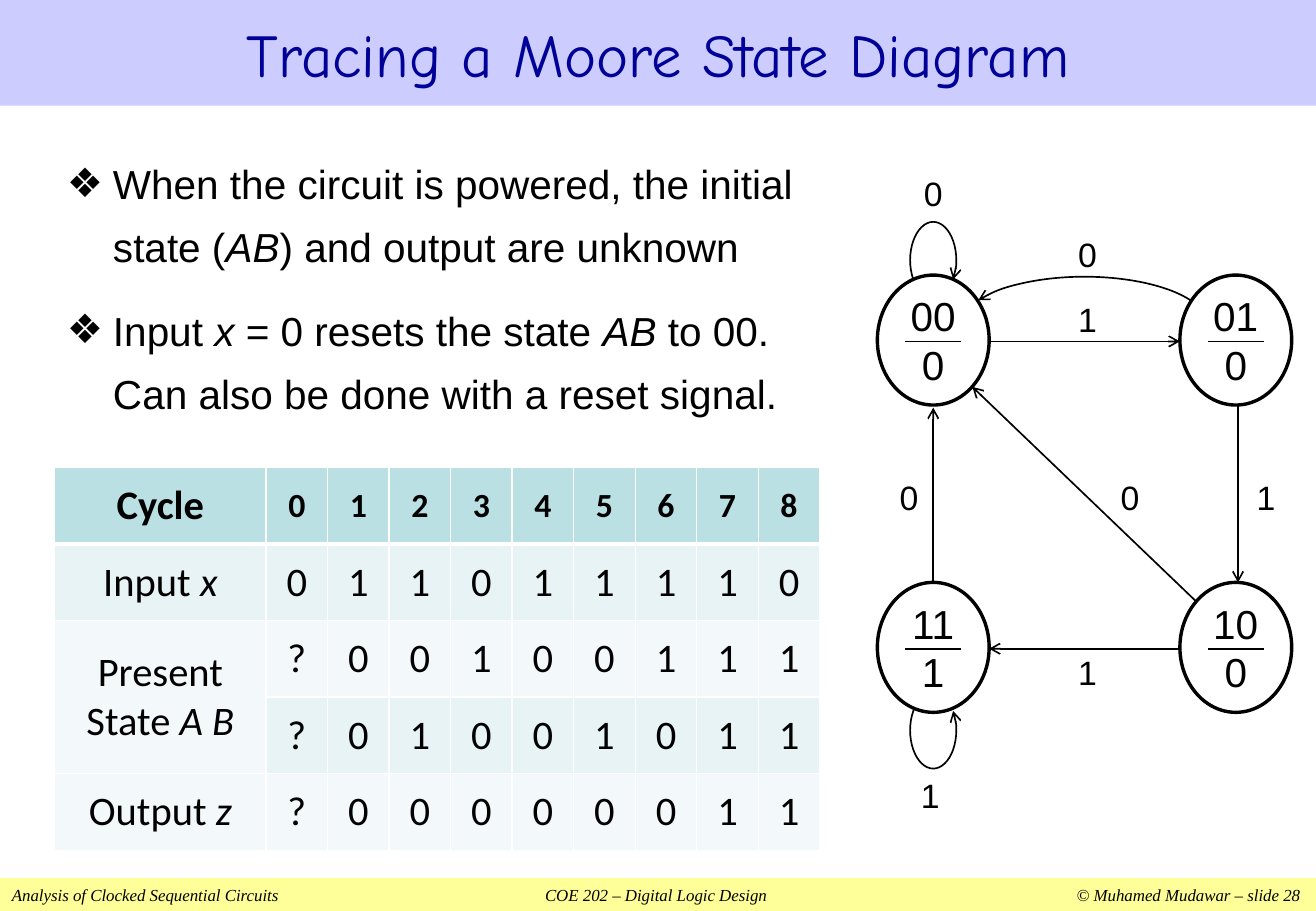
from dataclasses import dataclass

from lxml import etree
from pptx import Presentation
from pptx import util as u
from pptx.dml.color import RGBColor
from pptx.enum import shapes, text
from pptx.oxml import ns

TITLE = "Tracing a Moore State Diagram"
POINTS = [
    "When the circuit is powered, the initial state (*AB*) and output are unknown",
    "Input *x* = 0 resets the state *AB* to 00. Can also be done with a reset signal.",
]
FOOTER = ("Analysis of Clocked Sequential Circuits", "COE 202 – Digital Logic Design",
          "© Muhamed Mudawar – slide 28")
TRACE = [
    (["Cycle"], "012345678"),
    (["Input *x*"], "011011110"),
    (["Present", "State *A B*"], "?00100111"),
    ([], "?01001011"),
    (["Output *z*"], "?00000011"),
]
STATES = {"00": (0, 0, "0"), "01": (1, 0, "0"), "10": (1, 1, "0"), "11": (0, 1, "1")}
EDGES = [
    ("00", (1, 0.51), "01", (0, 0.51)),
    ("01", (0.52, 1), "10", (0.52, 0)),
    ("10", (0, 0.51), "11", (1, 0.51)),
    ("11", (0.5, 0), "00", (0.5, 1.02)),
    ("10", (0.15, 0.15), "00", (0.85, 0.86)),
]
ARCS = [
    ((0.5, -0.05), (2.03, 0.79), (115.8, 209.3), "headEnd", False),
    ((0, -0.26), (0.38, 0.63), (80.3, 26.56), "tailEnd", False),
    ((0, 1.27), (0.38, 0.63), (80.3, 26.56), "tailEnd", True),
]
LABELS = [
    ("0", 0, -0.48), ("0", 0.51, -0.28), ("1", 0.51, -0.07), ("0", -0.08, 0.51),
    ("0", 0.65, 0.51), ("1", 1.1, 0.51), ("1", 0.51, 1.08), ("1", -0.01, 1.48),
]


@dataclass(frozen=True)
class Theme:
    ink: str = "000000"
    paper: str = "FFFFFF"
    title_ink: str = "000099"
    title_band: str = "CCCCFF"
    footer_band: str = "FFFF99"
    header_row: str = "BBE0E3"
    bands: tuple = ("F3F9FA", "E7F3F4")
    title_font: str = "Comic Neue"
    body_font: str = "Arial"
    table_font: str = "Calibri"
    footer_font: str = "Times New Roman"
    title_size: int = 36
    body_size: int = 24
    label_size: int = 20
    footer_size: int = 10


THEME = Theme()
WIDTH, HEIGHT = 10.83, 7.5
TITLE_HEIGHT, FOOTER_HEIGHT = 0.87, 0.27
LEFT, COLUMN = 0.45, 6.3
HEAD_WIDTH, ROW_HEIGHT = 1.74, 0.63
STATE_SIZE = (0.92, 1.07)
ORIGIN, STEP = (7.68, 2.8), (2.49, 2.53)

deck = Presentation()
deck.slide_width, deck.slide_height = u.Inches(WIDTH), u.Inches(HEIGHT)
page = deck.slides.add_slide(deck.slide_layouts[1])


def inches(*lengths):
    return [u.Inches(length) for length in lengths]


def place(shape, left, top, width, height):
    shape.left, shape.top, shape.width, shape.height = inches(left, top, width, height)


def grid(column, row):
    return ORIGIN[0] + column * STEP[0], ORIGIN[1] + row * STEP[1]


def centred(point, size):
    return inches(point[0] - size[0] / 2, point[1] - size[1] / 2, *size)


def paint(target, color):
    target.fill.solid()
    target.fill.fore_color.rgb = RGBColor.from_string(color)


def outline(shape, width):
    shape.line.color.rgb = RGBColor.from_string(THEME.ink)
    shape.line.width = u.Pt(width)


def arrow(shape, end):
    etree.SubElement(shape.line._get_or_add_ln(), ns.qn("a:" + end), type="arrow")


def write(frame, lines, font, size, color=THEME.ink, bold=False, italic=False,
          align=text.PP_ALIGN.CENTER):
    for index, line in enumerate(lines):
        para = frame.add_paragraph() if index else frame.paragraphs[0]
        para.alignment = align
        for part, words in enumerate(line.split("*")):
            if words:
                span = para.add_run()
                span.text = words
                span.font.name, span.font.size = font, u.Pt(size)
                span.font.bold, span.font.italic = bold, italic or part % 2 == 1
                span.font.color.rgb = RGBColor.from_string(color)


def margins(frame, side, end):
    frame.margin_left = frame.margin_right = u.Inches(side)
    frame.margin_top = frame.margin_bottom = u.Inches(end)
    frame.vertical_anchor = text.MSO_ANCHOR.MIDDLE


def add_line(start, end, pointed):
    line = page.shapes.add_connector(shapes.MSO_CONNECTOR.STRAIGHT, *inches(*start, *end))
    outline(line, 1)
    if pointed:
        arrow(line, "tailEnd")
    etree.SubElement(line.element.spPr, ns.qn("a:effectLst"))


def add_title():
    box = page.shapes.title
    place(box, 0, 0, WIDTH, TITLE_HEIGHT)
    paint(box, THEME.title_band)
    box.text_frame.auto_size = text.MSO_AUTO_SIZE.NONE
    margins(box.text_frame, 0.1, 0.05)
    write(box.text_frame, [TITLE], THEME.title_font, THEME.title_size, THEME.title_ink)


def add_points():
    box = page.placeholders[1]
    place(box, LEFT, 1.14, COLUMN, 2.44)
    frame = box.text_frame
    frame.auto_size = text.MSO_AUTO_SIZE.NONE
    write(frame, POINTS, THEME.body_font, THEME.body_size, align=text.PP_ALIGN.LEFT)
    for para in frame.paragraphs:
        para.line_spacing, para.space_before = 1.3, u.Pt(12)
        props = para._p.get_or_add_pPr()
        props.set("marL", str(u.Inches(0.38)))
        props.set("indent", str(-u.Inches(0.38)))
        etree.SubElement(props, ns.qn("a:buFont"), typeface=THEME.body_font)
        etree.SubElement(props, ns.qn("a:buChar"), char="❖")


def add_footer():
    box = page.shapes.add_shape(shapes.MSO_SHAPE.RECTANGLE,
                                *inches(0, HEIGHT - FOOTER_HEIGHT, WIDTH, FOOTER_HEIGHT))
    box.shadow.inherit = False
    paint(box, THEME.footer_band)
    box.line.fill.background()
    frame = box.text_frame
    margins(frame, 0.1, 0)
    write(frame, ["\t".join(FOOTER)], THEME.footer_font, THEME.footer_size,
          italic=True, align=text.PP_ALIGN.LEFT)
    tabs = etree.SubElement(frame.paragraphs[0]._p.get_or_add_pPr(), ns.qn("a:tabLst"))
    for position, align in ((5.3, "ctr"), (10.6, "r")):
        etree.SubElement(tabs, ns.qn("a:tab"), pos=str(u.Inches(position)), algn=align)


def add_borders(cell, row):
    widths = {"lnL": 1, "lnR": 1, "lnT": 3 if row == 1 else 1, "lnB": 1 if row else 3}
    props = cell._tc.get_or_add_tcPr()
    for index, (side, width) in enumerate(widths.items()):
        border = etree.Element(ns.qn("a:" + side), w=str(u.Pt(width)))
        fill = etree.SubElement(border, ns.qn("a:solidFill"))
        etree.SubElement(fill, ns.qn("a:srgbClr"), val=THEME.paper)
        props.insert(index, border)


def add_trace():
    cycles = len(TRACE[0][1])
    table = page.shapes.add_table(len(TRACE), cycles + 1, *inches(
        LEFT, 3.85, COLUMN, ROW_HEIGHT * len(TRACE))).table
    table.horz_banding = False
    for index, column in enumerate(table.columns):
        column.width = u.Inches((COLUMN - HEAD_WIDTH) / cycles if index else HEAD_WIDTH)
    for row, (head, values) in enumerate(TRACE):
        table.rows[row].height = u.Inches(ROW_HEIGHT)
        for column, lines in enumerate([head, *values]):
            cell = table.cell(row, column)
            margins(cell, 0, 0)
            paint(cell, THEME.bands[row % 2] if row else THEME.header_row)
            add_borders(cell, row)
            size = THEME.label_size if row == 0 and column else THEME.body_size
            write(cell.text_frame, lines, THEME.table_font, size, bold=row == 0)
    table.cell(2, 0).merge(table.cell(3, 0))


def state_point(name, share):
    centre = grid(*STATES[name][:2])
    return [c + (s - 0.5) * size for c, s, size in zip(centre, share, STATE_SIZE)]


def add_diagram():
    for point, size, angles, end, flipped in ARCS:
        arc = page.shapes.add_shape(shapes.MSO_SHAPE.ARC, *centred(grid(*point), size))
        arc.adjustments[0], arc.adjustments[1] = angles
        arc.shadow.inherit = False
        arc.fill.background()
        outline(arc, 1)
        arrow(arc, end)
        if flipped:
            arc.element.spPr.xfrm.set("flipV", "1")
    for source, start, target, end in EDGES:
        add_line(state_point(source, start), state_point(target, end), True)
    for name, (column, row, output) in STATES.items():
        state = page.shapes.add_shape(shapes.MSO_SHAPE.OVAL,
                                      *centred(grid(column, row), STATE_SIZE))
        state.shadow.inherit = False
        paint(state, THEME.paper)
        outline(state, 2)
        margins(state.text_frame, 0, 0.05)
        write(state.text_frame, [name, output], THEME.body_font, THEME.body_size)
        add_line(state_point(name, (0.25, 0.51)), state_point(name, (0.75, 0.51)), False)
    for label, column, row in LABELS:
        box = page.shapes.add_textbox(*centred(grid(column, row), (0.38, 0.34)))
        box.text_frame.word_wrap = False
        margins(box.text_frame, 0, 0)
        write(box.text_frame, [label], THEME.body_font, THEME.label_size)


add_footer()
add_title()
add_points()
add_trace()
add_diagram()
deck.save("out.pptx")
